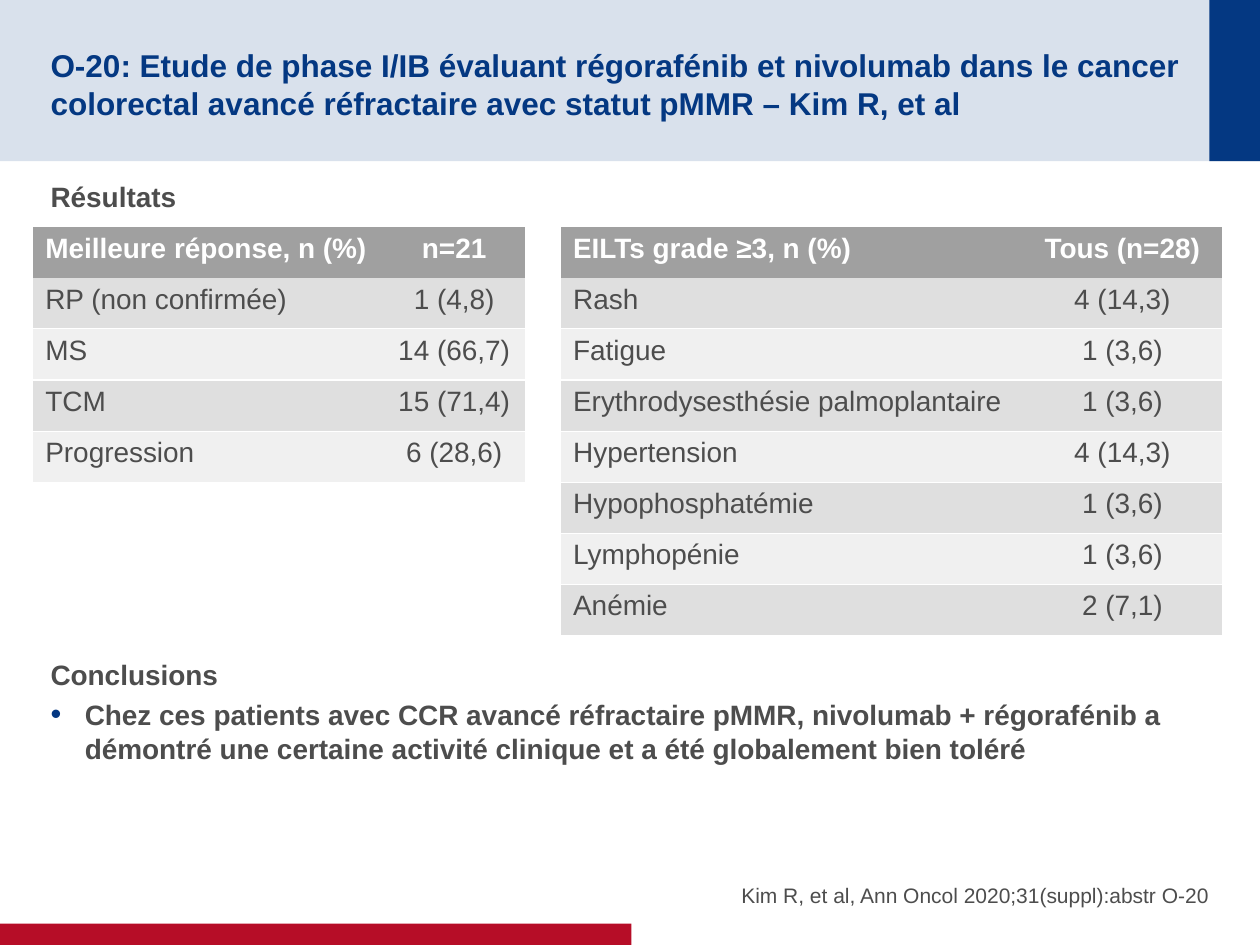
from lxml import etree
from pptx import Presentation
from pptx import util as u
from pptx.dml.color import RGBColor
from pptx.enum import shapes, text
from pptx.oxml import parse_xml
from pptx.oxml.ns import nsdecls, qn

NAVY, PALE_BLUE, RED = "043882", "D9E1EC", "B60D27"
INK, WHITE = "4D4D4D", "FFFFFF"
HEADER_GREY, BANDS = "A0A0A0", ("DFDFDF", "F0F0F0")
NO_STYLE = "{2D5ABB26-0587-4C30-8999-92F81FD0307C}"
ROW_HEIGHT = 1.03
MARGIN = 1.02

RESPONSES = [
    ("Meilleure réponse, n (%)", "n=21"),
    ("RP (non confirmée)", "1 (4,8)"),
    ("MS", "14 (66,7)"),
    ("TCM", "15 (71,4)"),
    ("Progression", "6 (28,6)"),
]
ADVERSE_EVENTS = [
    ("EILTs grade ≥3, n (%)", "Tous (n=28)"),
    ("Rash", "4 (14,3)"),
    ("Fatigue", "1 (3,6)"),
    ("Erythrodysesthésie palmoplantaire", "1 (3,6)"),
    ("Hypertension", "4 (14,3)"),
    ("Hypophosphatémie", "1 (3,6)"),
    ("Lymphopénie", "1 (3,6)"),
    ("Anémie", "2 (7,1)"),
]


def rgb(hex_color):
    return RGBColor.from_string(hex_color)


def set_font(paragraph, size, color, bold=False):
    font = paragraph.font
    font.name, font.size, font.bold = "Arial", u.Pt(size), bold
    font.color.rgb = rgb(color)


def add_bar(slide, box, color):
    bar = slide.shapes.add_shape(shapes.MSO_SHAPE.RECTANGLE, *map(u.Cm, box))
    bar.shadow.inherit = False
    bar.fill.solid()
    bar.fill.fore_color.rgb = rgb(color)
    bar.line.fill.background()


def add_frame(slide, box, anchor, top=0, bottom=0):
    """Return a wrapping text frame without side insets."""
    frame = slide.shapes.add_textbox(*map(u.Cm, box)).text_frame
    frame.word_wrap = True
    frame.vertical_anchor = anchor
    frame.margin_left = frame.margin_right = 0
    frame.margin_top, frame.margin_bottom = u.Cm(top), u.Cm(bottom)
    return frame


def add_bullet(paragraph):
    props = paragraph._p.get_or_add_pPr()
    props.set("marL", str(u.Cm(0.69)))
    props.set("indent", str(-u.Cm(0.69)))
    color = etree.SubElement(props, qn("a:buClr"))
    etree.SubElement(color, qn("a:srgbClr"), val=NAVY)
    etree.SubElement(props, qn("a:buSzPct"), val="110000")
    etree.SubElement(props, qn("a:buFont"), typeface="Arial")
    etree.SubElement(props, qn("a:buChar"), char="•")


def add_title_band(slide, box):
    left, top, width, height = box
    add_bar(slide, box, PALE_BLUE)
    add_bar(slide, (left + width - MARGIN, top, MARGIN, height), NAVY)
    title_box = (left + MARGIN, top + 0.51, width - 2.51, height - 1.02)
    title = add_frame(slide, title_box, text.MSO_ANCHOR.MIDDLE, top=0.13).paragraphs[0]
    title.text = ("O-20: Etude de phase I/IB évaluant régorafénib et nivolumab dans le cancer "
                  "colorectal avancé réfractaire avec statut pMMR – Kim R, et al")
    set_font(title, 18, NAVY, bold=True)


def add_body(slide, box):
    """Headings and conclusion; the space before Conclusions leaves room for the tables."""
    frame = add_frame(slide, box, text.MSO_ANCHOR.TOP, top=0.13, bottom=0.13)
    results = frame.paragraphs[0]
    conclusions, finding = frame.add_paragraph(), frame.add_paragraph()
    results.text = "Résultats"
    conclusions.text = "Conclusions"
    finding.text = ("Chez ces patients avec CCR avancé réfractaire pMMR, nivolumab + régorafénib a "
                    "démontré une certaine activité clinique et a été globalement bien toléré")
    for paragraph in frame.paragraphs:
        set_font(paragraph, 16, INK, bold=True)
        paragraph.space_after = u.Pt(4)
    conclusions.space_before = u.Pt(250)
    add_bullet(finding)


def add_rule(cell, side):
    cell._tc.get_or_add_tcPr().insert(0, parse_xml(
        f'<a:{side} {nsdecls("a")} w="{u.Pt(0.75)}"><a:solidFill>'
        f'<a:srgbClr val="{WHITE}"/></a:solidFill></a:{side}>'))


def add_data_table(slide, left, top, column_widths, rows):
    box = (left, top, sum(column_widths), ROW_HEIGHT * len(rows))
    frame = slide.shapes.add_table(len(rows), len(column_widths), *map(u.Cm, box))
    table = frame.table
    table._tbl.tblPr.find(qn("a:tableStyleId")).text = NO_STYLE
    for column, width in zip(table.columns, column_widths):
        column.width = u.Cm(width)
    for r, values in enumerate(rows):
        table.rows[r].height = u.Cm(ROW_HEIGHT)
        is_header = r == 0
        for c, value in enumerate(values):
            cell = table.cell(r, c)
            cell.fill.solid()
            cell.fill.fore_color.rgb = rgb(HEADER_GREY if is_header else BANDS[(r - 1) % 2])
            if 0 < r < len(rows) - 1:
                add_rule(cell, "lnB")
            if r > 1:
                add_rule(cell, "lnT")
            paragraph = cell.text_frame.paragraphs[0]
            paragraph.text = value
            set_font(paragraph, 16, WHITE if is_header else INK, bold=is_header)
            if c > 0:
                paragraph.alignment = text.PP_ALIGN.CENTER


def add_citation(slide, box):
    citation = add_frame(slide, box, text.MSO_ANCHOR.BOTTOM).paragraphs[0]
    citation.text = "Kim R, et al, Ann Oncol 2020;31(suppl):abstr O-20"
    citation.alignment = text.PP_ALIGN.RIGHT
    citation.space_after = u.Pt(4)
    set_font(citation, 12, INK)


def main():
    deck = Presentation()
    deck.slide_width, deck.slide_height = u.Cm(25.4), u.Cm(19.05)
    slide = deck.slides.add_slide(deck.slide_layouts[6])
    add_title_band(slide, (0, 0, 25.4, 3.25))
    add_bar(slide, (0, 18.62, 12.73, 0.43), RED)
    add_body(slide, (MARGIN, 3.48, 23.37, 13.18))
    add_citation(slide, (12.9, 16.94, 11.48, 1.35))
    add_data_table(slide, 0.66, 4.57, (7.06, 2.87), RESPONSES)
    add_data_table(slide, 11.3, 4.57, (9.32, 4.01), ADVERSE_EVENTS)
    deck.save("out.pptx")


if __name__ == "__main__":
    main()
